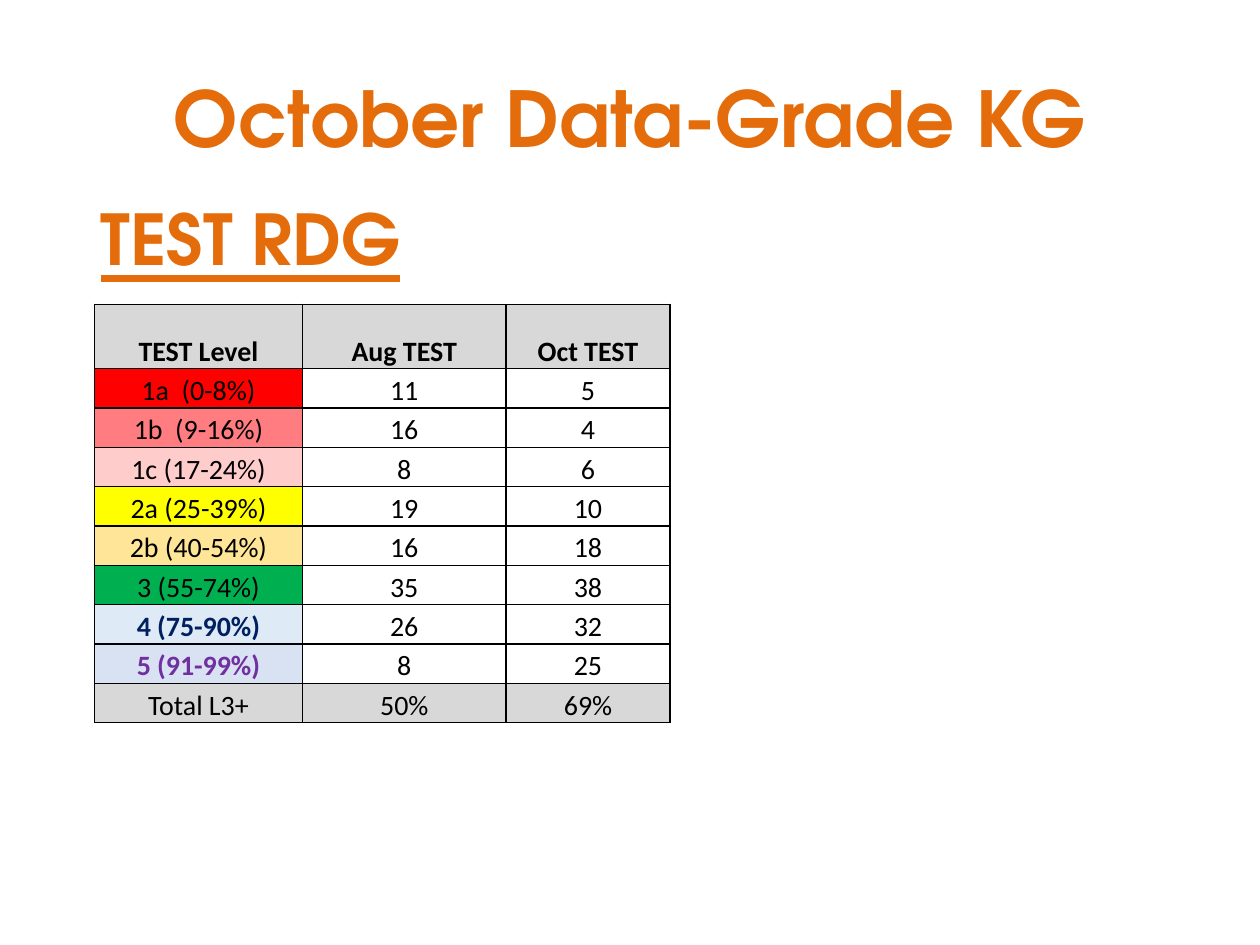
"""Build the October kindergarten reading test data slide."""
from dataclasses import dataclass

from lxml import etree
from pptx import Presentation
from pptx.dml.color import RGBColor
from pptx.enum.text import MSO_ANCHOR, PP_ALIGN
from pptx.oxml.ns import qn
from pptx.slide import Slide
from pptx.table import _Cell
from pptx.util import Pt

CENTER, LEFT = PP_ALIGN.CENTER, PP_ALIGN.LEFT
TOP, MIDDLE, BOTTOM = MSO_ANCHOR.TOP, MSO_ANCHOR.MIDDLE, MSO_ANCHOR.BOTTOM

BLACK = RGBColor(0x00, 0x00, 0x00)
WHITE = RGBColor(0xFF, 0xFF, 0xFF)
ORANGE = RGBColor(0xE4, 0x6C, 0x0A)
GRAY = RGBColor(0xD8, 0xD8, 0xD8)
RED = RGBColor(0xFF, 0x00, 0x00)
SALMON = RGBColor(0xFF, 0x7C, 0x80)
PINK = RGBColor(0xFF, 0xCC, 0xCC)
YELLOW = RGBColor(0xFF, 0xFF, 0x00)
TAN = RGBColor(0xFF, 0xE5, 0x98)
GREEN = RGBColor(0x00, 0xB0, 0x50)
PALE_BLUE = RGBColor(0xDE, 0xEA, 0xF6)
LAVENDER = RGBColor(0xD9, 0xE2, 0xF3)
NAVY = RGBColor(0x00, 0x20, 0x60)
PURPLE = RGBColor(0x70, 0x30, 0xA0)

HEADING_FONT, TABLE_FONT = "TeX Gyre Adventor", "Calibri"
COLUMN_WIDTHS = (118.8, 116.4, 93.6)
HEADER_HEIGHT, ROW_HEIGHT = 36.7, 22.5
BORDER_TAGS = ("a:lnL", "a:lnR", "a:lnT", "a:lnB")


@dataclass(frozen=True)
class Heading:
    text: str
    top: float
    height: float
    size: float
    alignment: PP_ALIGN
    anchor: MSO_ANCHOR
    left_margin: float = 7.2
    underline: bool = False


@dataclass(frozen=True)
class LevelRow:
    texts: tuple[str, str, str]
    level_fill: RGBColor
    score_fill: RGBColor = WHITE
    level_color: RGBColor = BLACK
    level_bold: bool = False
    score_bold: bool = False


HEADINGS = (
    Heading("October Data-Grade KG", 21.6, 90, 44, CENTER, MIDDLE),
    Heading("TEST RDG", 108, 356.4, 40, LEFT, TOP, left_margin=21.7, underline=True),
)
ROWS = (
    LevelRow(("TEST Level", "Aug TEST", "Oct TEST"), GRAY, GRAY,
             level_bold=True, score_bold=True),
    LevelRow(("1a  (0-8%)", "11", "5"), RED),
    LevelRow(("1b  (9-16%)", "16", "4"), SALMON),
    LevelRow(("1c (17-24%)", "8", "6"), PINK),
    LevelRow(("2a (25-39%)", "19", "10"), YELLOW),
    LevelRow(("2b (40-54%)", "16", "18"), TAN),
    LevelRow(("3 (55-74%)", "35", "38"), GREEN),
    LevelRow(("4 (75-90%)", "26", "32"), PALE_BLUE, level_color=NAVY, level_bold=True),
    LevelRow(("5 (91-99%)", "8", "25"), LAVENDER, level_color=PURPLE, level_bold=True),
    LevelRow(("Total L3+", "50%", "69%"), GRAY, GRAY),
)


def draw_heading(slide: Slide, heading: Heading) -> None:
    """Add one orange heading as a text box."""
    shape = slide.shapes.add_textbox(Pt(36), Pt(heading.top), Pt(648), Pt(heading.height))
    frame = shape.text_frame
    frame.word_wrap = True
    frame.vertical_anchor = heading.anchor
    frame.margin_left = Pt(heading.left_margin)
    paragraph = frame.paragraphs[0]
    paragraph.text = heading.text
    paragraph.alignment = heading.alignment
    font = paragraph.font
    font.name, font.size, font.bold = HEADING_FONT, Pt(heading.size), True
    font.underline = heading.underline
    font.color.rgb = ORANGE


def add_borders(cell: _Cell) -> None:
    """Outline a cell with thin black lines ahead of its fill."""
    properties = cell._tc.get_or_add_tcPr()
    for position, tag in enumerate(BORDER_TAGS):
        line = etree.Element(qn(tag), w=str(Pt(1)))
        fill = etree.SubElement(line, qn("a:solidFill"))
        etree.SubElement(fill, qn("a:srgbClr"), val=str(BLACK))
        properties.insert(position, line)


def draw_cell(cell: _Cell, text: str, fill: RGBColor, color: RGBColor, bold: bool) -> None:
    """Fill, outline and label one table cell."""
    cell.fill.solid()
    cell.fill.fore_color.rgb = fill
    cell.margin_left = cell.margin_right = Pt(5)
    cell.margin_top = cell.margin_bottom = Pt(0)
    cell.vertical_anchor = BOTTOM
    paragraph = cell.text_frame.paragraphs[0]
    paragraph.text = text
    paragraph.alignment = CENTER
    paragraph.line_spacing = 1.15
    font = paragraph.font
    font.name, font.size, font.bold = TABLE_FONT, Pt(16), bold
    font.color.rgb = color
    add_borders(cell)


def draw_table(slide: Slide, rows: tuple[LevelRow, ...]) -> None:
    """Add the table of test levels."""
    height = HEADER_HEIGHT + ROW_HEIGHT * (len(rows) - 1)
    table = slide.shapes.add_table(
        len(rows), len(COLUMN_WIDTHS), Pt(54), Pt(174), Pt(sum(COLUMN_WIDTHS)), Pt(height)
    ).table
    for column, width in zip(table.columns, COLUMN_WIDTHS):
        column.width = Pt(width)
    for index, row in enumerate(rows):
        table.rows[index].height = Pt(ROW_HEIGHT if index else HEADER_HEIGHT)
        level, *scores = row.texts
        draw_cell(table.cell(index, 0), level, row.level_fill, row.level_color, row.level_bold)
        for column_index, score in enumerate(scores, start=1):
            draw_cell(table.cell(index, column_index), score, row.score_fill, BLACK,
                      row.score_bold)


def main() -> None:
    """Create and save the presentation."""
    presentation = Presentation()
    presentation.slide_width, presentation.slide_height = Pt(720), Pt(540)
    slide = presentation.slides.add_slide(presentation.slide_layouts[6])
    for heading in HEADINGS:
        draw_heading(slide, heading)
    draw_table(slide, ROWS)
    presentation.save("out.pptx")


if __name__ == "__main__":
    main()
